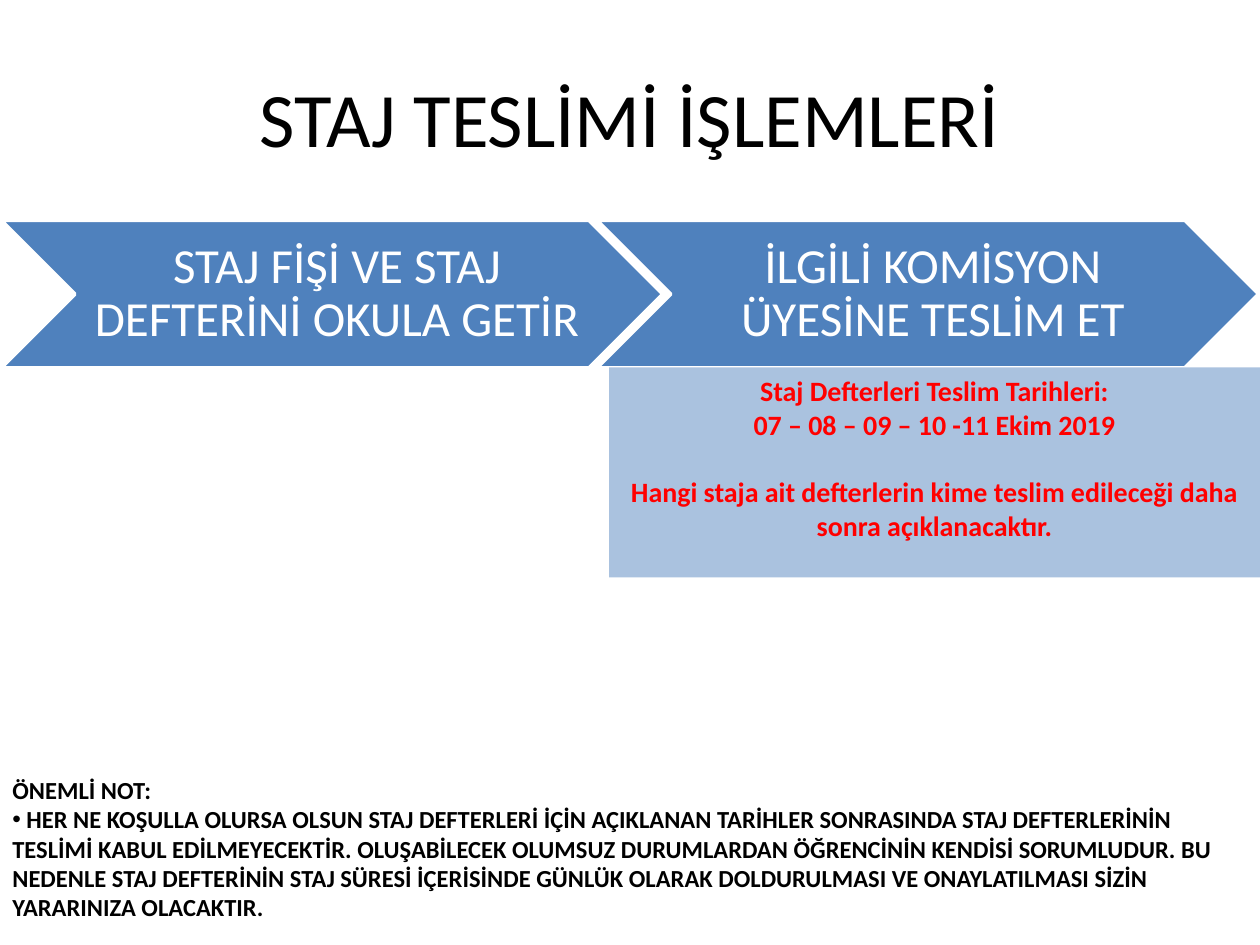
"""Build the internship hand-in slide."""
from dataclasses import dataclass

import pptx
import pptx.dml.color
import pptx.enum.shapes
import pptx.enum.text
import pptx.oxml
import pptx.oxml.ns
import pptx.util
from lxml import etree

Pt = pptx.util.Pt
RGBColor = pptx.dml.color.RGBColor
PP_ALIGN = pptx.enum.text.PP_ALIGN
MSO_ANCHOR = pptx.enum.text.MSO_ANCHOR
MSO_SHAPE = pptx.enum.shapes.MSO_SHAPE
qn = pptx.oxml.ns.qn

BLUE = RGBColor(0x4F, 0x81, 0xBD)
RED = RGBColor(0xFF, 0x00, 0x00)
BLACK = RGBColor(0x00, 0x00, 0x00)
WHITE = RGBColor(0xFF, 0xFF, 0xFF)

STEP_LEFT, STEP_PITCH = 0.7, 340.5
STEP_TOP, STEP_WIDTH, STEP_HEIGHT = 126, 378, 84.2
STEPS = (
    "STAJ FİŞİ VE STAJ DEFTERİNİ OKULA GETİR",
    "İLGİLİ KOMİSYON ÜYESİNE TESLİM ET",
)
DATES = (
    "Staj Defterleri Teslim Tarihleri:",
    "07 – 08 – 09 – 10 -11 Ekim 2019",
    "Hangi staja ait defterlerin kime teslim edileceği daha sonra açıklanacaktır.",
)
NOTE = (
    "ÖNEMLİ NOT:",
    " HER NE KOŞULLA OLURSA OLSUN STAJ DEFTERLERİ İÇİN AÇIKLANAN TARİHLER "
    "SONRASINDA STAJ DEFTERLERİNİN TESLİMİ KABUL EDİLMEYECEKTİR. OLUŞABİLECEK "
    "OLUMSUZ DURUMLARDAN ÖĞRENCİNİN KENDİSİ SORUMLUDUR. BU NEDENLE STAJ "
    "DEFTERİNİN STAJ SÜRESİ İÇERİSİNDE GÜNLÜK OLARAK DOLDURULMASI VE "
    "ONAYLATILMASI SİZİN YARARINIZA OLACAKTIR.",
)


@dataclass(frozen=True)
class Box:
    left: float
    top: float
    width: float
    height: float

    def lengths(self) -> tuple:
        return Pt(self.left), Pt(self.top), Pt(self.width), Pt(self.height)


@dataclass(frozen=True)
class TextStyle:
    size: float
    color: RGBColor
    bold: bool = False
    alignment: PP_ALIGN = PP_ALIGN.CENTER
    anchor: MSO_ANCHOR = MSO_ANCHOR.MIDDLE


STEP_STYLE = TextStyle(28, WHITE)
DATES_STYLE = TextStyle(16, RED, True, anchor=MSO_ANCHOR.TOP)
NOTE_STYLE = TextStyle(14, BLACK, True, PP_ALIGN.LEFT, MSO_ANCHOR.TOP)
TITLE_STYLE = TextStyle(44, BLACK)


def write_text(shape, lines: tuple, style: TextStyle) -> None:
    text_frame = shape.text_frame
    text_frame.text = "\n".join(lines)
    text_frame.word_wrap = True
    text_frame.vertical_anchor = style.anchor
    for paragraph in text_frame.paragraphs:
        paragraph.alignment = style.alignment
        for run in paragraph.runs:
            run.font.name = "Calibri"
            run.font.size = Pt(style.size)
            run.font.bold = style.bold
            run.font.color.rgb = style.color


def add_filled_shape(slide, kind: MSO_SHAPE, box: Box):
    shape = slide.shapes.add_shape(kind, *box.lengths())
    shape.shadow.inherit = False
    shape.fill.solid()
    shape.fill.fore_color.rgb = BLUE
    return shape


def add_step(slide, index: int, label: str) -> None:
    box = Box(STEP_LEFT + index * STEP_PITCH, STEP_TOP, STEP_WIDTH, STEP_HEIGHT)
    step = add_filled_shape(slide, MSO_SHAPE.CHEVRON, box)
    step.line.color.rgb = WHITE
    step.line.width = Pt(2)
    write_text(step, (label,), STEP_STYLE)
    text_frame = step.text_frame
    text_frame.margin_left = Pt(8.4)
    text_frame.margin_top = text_frame.margin_right = text_frame.margin_bottom = Pt(2.8)
    text_frame.paragraphs[0].line_spacing = 0.9


def add_dates(slide) -> None:
    panel = add_filled_shape(slide, MSO_SHAPE.RECTANGLE, Box(348, 210, 372, 120))
    panel.line.fill.background()
    color = panel.fill._xPr.find(".//" + qn("a:srgbClr"))
    etree.SubElement(color, qn("a:alpha")).set("val", "48000")
    write_text(panel, DATES, DATES_STYLE)
    panel.text_frame.paragraphs[-1].space_before = Pt(19.5)


def add_note(slide) -> None:
    note = slide.shapes.add_textbox(*Box(0, 439.2, 720, 92.2).lengths())
    write_text(note, NOTE, NOTE_STYLE)
    properties = note.text_frame.paragraphs[1]._p.get_or_add_pPr()
    etree.SubElement(properties, qn("a:buFont")).set("typeface", "Arial")
    etree.SubElement(properties, qn("a:buChar")).set("char", "•")


def main() -> None:
    presentation = pptx.Presentation()
    presentation.slide_width, presentation.slide_height = Pt(720), Pt(540)
    slide = presentation.slides.add_slide(presentation.slide_layouts[5])
    title = slide.shapes.title
    title.left, title.top, title.width, title.height = Box(36, 21.6, 648, 90).lengths()
    write_text(title, ("STAJ TESLİMİ İŞLEMLERİ",), TITLE_STYLE)
    for index, label in enumerate(STEPS):
        add_step(slide, index, label)
    add_dates(slide)
    add_note(slide)
    presentation.save("out.pptx")


if __name__ == "__main__":
    main()
